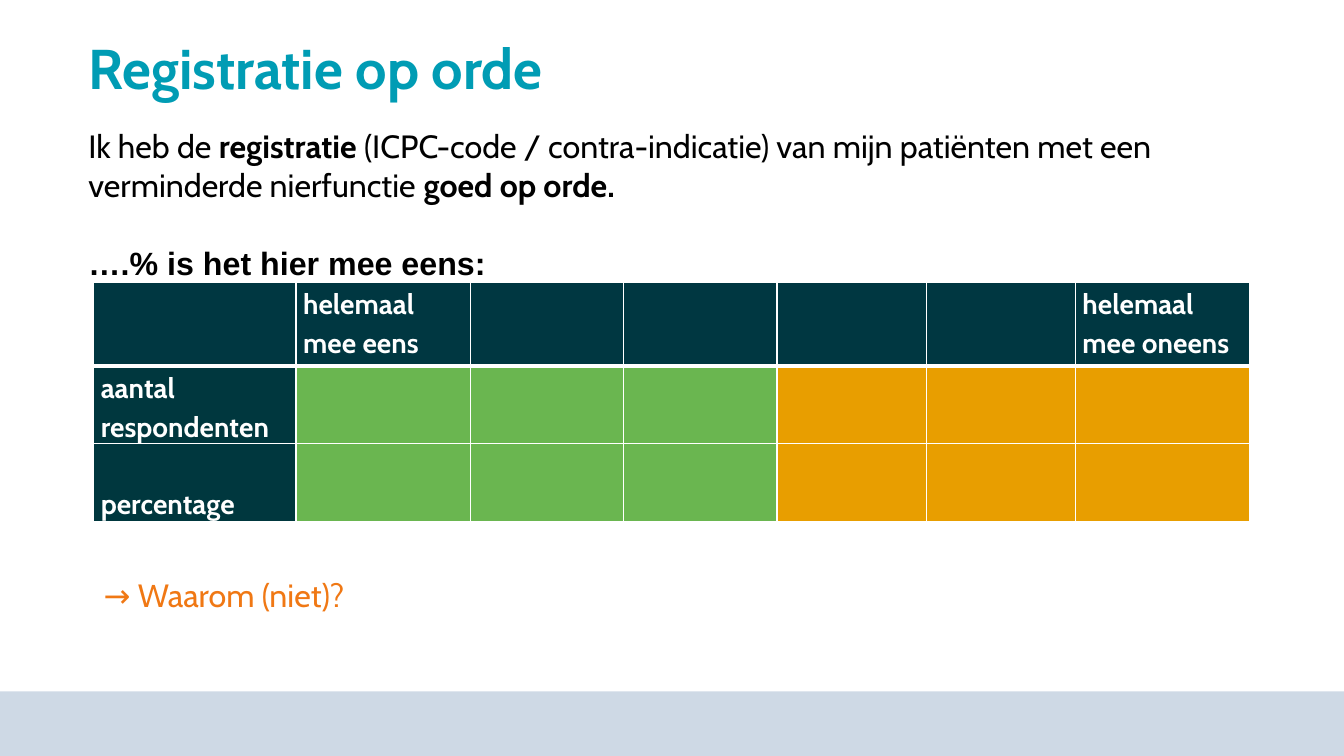
"""Build the slide on orderly registration with its response table."""
from dataclasses import dataclass

from lxml import etree
from pptx import Presentation
from pptx import util as u
from pptx.dml.color import RGBColor
from pptx.enum import shapes, text
from pptx.oxml import ns

HUE = {
    "band": "CED9E5", "title": "009CB4", "head": "003741", "side": "00373E",
    "agree": "6AB650", "differ": "E89E00", "ask": "F07814",
    "black": "000000", "white": "FFFFFF",
}
COLS = [5.1, 4.4, 3.86, 3.86, 3.76, 3.76, 4.4]
ROWS = [2.1, 1.8, 1.98]
CELLS = {
    (0, 1): ["helemaal mee eens"],
    (0, 6): ["helemaal mee oneens"],
    (1, 0): ["aantal", "respondenten"],
    (2, 0): ["percentage"],
}


@dataclass
class Run:
    words: str
    size: float
    hue: str
    bold: bool = False
    font: str = "Cabin"


@dataclass
class Box:
    left: float
    top: float
    width: float
    height: float
    paras: list[list[Run]]
    pitch: float = 1.0
    gap: float = 0
    anchor: text.MSO_ANCHOR = text.MSO_ANCHOR.TOP


def color(name: str) -> RGBColor:
    return RGBColor.from_string(HUE[name])


def write(frame, paras: list[list[Run]], pitch: float, gap: float = 0) -> None:
    for i, runs in enumerate(paras):
        para = frame.add_paragraph() if i else frame.paragraphs[0]
        para.line_spacing = pitch
        if i and gap:
            para.space_before = u.Pt(gap)
        for item in runs:
            run = para.add_run()
            run.text = item.words
            run.font.size = u.Pt(item.size)
            run.font.name = item.font
            run.font.bold = item.bold
            run.font.color.rgb = color(item.hue)


def place(slide, box: Box) -> None:
    frame = slide.shapes.add_textbox(
        u.Cm(box.left), u.Cm(box.top), u.Cm(box.width), u.Cm(box.height)
    ).text_frame
    frame.word_wrap = True
    frame.vertical_anchor = box.anchor
    write(frame, box.paras, box.pitch, box.gap)


def edge(cell, side: str, width: float) -> None:
    props = cell._tc.get_or_add_tcPr()
    line = etree.SubElement(props, ns.qn(f"a:ln{side}"), w=str(u.Pt(width)))
    fill = etree.SubElement(line, ns.qn("a:solidFill"))
    etree.SubElement(fill, ns.qn("a:srgbClr"), val=HUE["white"])


def shade(row: int, col: int) -> str:
    if row == 0:
        return "head"
    if col == 0:
        return "side"
    return "agree" if col < 4 else "differ"


def grid(slide) -> None:
    table = slide.shapes.add_table(
        len(ROWS), len(COLS), u.Cm(2.36), u.Cm(7.12),
        u.Cm(sum(COLS)), u.Cm(sum(ROWS))
    ).table
    for col, width in zip(table.columns, COLS):
        col.width = u.Cm(width)
    for r, height in enumerate(ROWS):
        table.rows[r].height = u.Cm(height)
        for c in range(len(COLS)):
            cell = table.cell(r, c)
            cell.margin_left = cell.margin_right = u.Cm(0.18)
            cell.margin_top = cell.margin_bottom = 0
            for side in "LRTB":
                thick = (r, side) in ((0, "B"), (1, "T"))
                edge(cell, side, 3 if thick else 1)
            cell.fill.solid()
            cell.fill.fore_color.rgb = color(shade(r, c))
            if r == 2:
                cell.vertical_anchor = text.MSO_ANCHOR.BOTTOM
            if (r, c) in CELLS:
                paras = [[Run(words, 20, "white", True)] for words in CELLS[r, c]]
                write(cell.text_frame, paras, 1.15)


def main() -> None:
    deck = Presentation()
    deck.slide_width, deck.slide_height = u.Cm(33.87), u.Cm(19.05)
    slide = deck.slides.add_slide(deck.slide_layouts[6])

    band = slide.shapes.add_shape(
        shapes.MSO_SHAPE.RECTANGLE, 0, u.Cm(17.42), u.Cm(33.87), u.Cm(1.63)
    )
    band.shadow.inherit = False
    band.fill.solid()
    band.fill.fore_color.rgb = color("band")
    band.line.fill.background()

    place(slide, Box(1.98, 0.91, 27.13, 1.8,
                     [[Run("Registratie op orde", 40, "title", True)]], pitch=0.9))
    grid(slide)
    claim = [
        Run("Ik heb de ", 23, "black"),
        Run("registratie ", 23, "black", True),
        Run("(ICPC-code / contra-indicatie) van mijn patiënten met een "
            "verminderde nierfunctie ", 23, "black"),
        Run("goed op orde.", 23, "black", True),
    ]
    score = [Run("….% is het hier mee eens:", 23, "black", True, "Arial")]
    place(slide, Box(1.98, 3.05, 27.81, 4.19, [claim, score],
                     gap=28, anchor=text.MSO_ANCHOR.MIDDLE))
    place(slide, Box(2.36, 14.38, 16.94, 1.24,
                     [[Run("→ Waarom (niet)?", 23, "ask")]]))
    deck.save("out.pptx")


if __name__ == "__main__":
    main()
